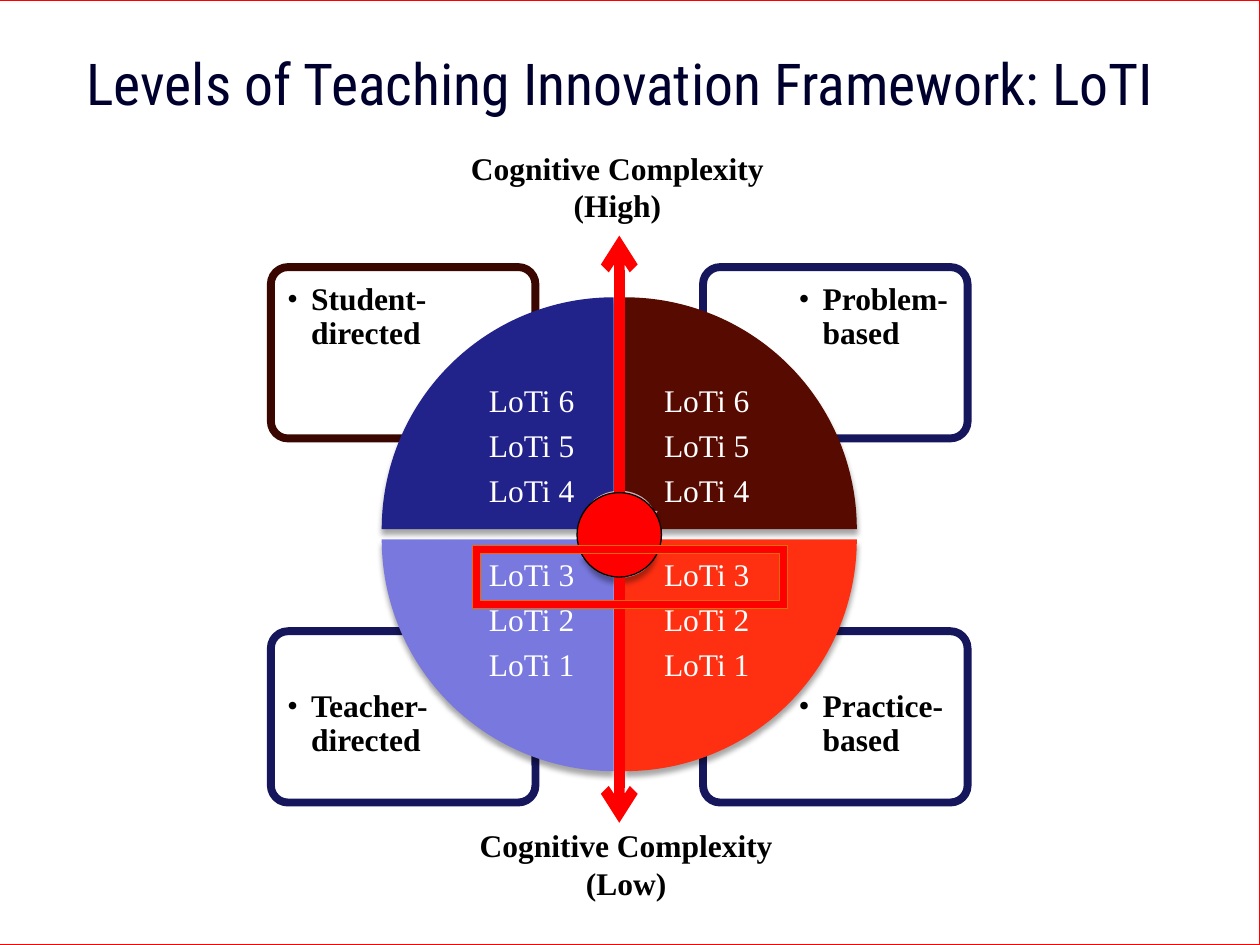
from lxml import etree
from pptx import Presentation
from pptx import util as u
from pptx.dml.color import RGBColor
from pptx.enum import shapes, text
from pptx.oxml.ns import qn

COLORS = {"white": "FFFFFF", "black": "000000", "red": "FF0000", "title": "00002E",
          "navy": "16165D", "maroon": "3A0700", "blue": "22228B", "brown": "560A00",
          "orange": "FF2F12", "lilac": "7878DE", "rose": "D3ABAB", "amber": "E46C0A"}
SHAPE = shapes.MSO_SHAPE
ALIGN = text.PP_ALIGN
ANCHOR = text.MSO_ANCHOR
SERIF = "Times New Roman"


def rgb(name):
    return RGBColor.from_string(COLORS[name])


def add_xml(parent, tag, **attrs):
    return etree.SubElement(parent, qn(tag), {k: str(v) for k, v in attrs.items()})


class Canvas:
    """Places elements on a grid of 100 columns by 75 rows."""

    def __init__(self, prs, cols=100, rows=75):
        self.s = prs.slides.add_slide(prs.slide_layouts[6])
        self.col, self.row = prs.slide_width / cols, prs.slide_height / rows

    def box(self, x, y, w, h):
        return [u.Emu(round(n * unit)) for n, unit in
                zip((x, y, w, h), (self.col, self.row) * 2)]

    def shape(self, kind, at, fill, line=None, width=0.75, rotation=0,
              adj=None, alpha=None, shadow=False):
        sp = self.s.shapes.add_shape(kind, *self.box(*at))
        sp.shadow.inherit = False
        sp.rotation = rotation
        sp.fill.solid()
        sp.fill.fore_color.rgb = rgb(fill)
        if adj is not None:
            sp.adjustments[0] = adj
        if alpha:
            color = sp.fill._xPr.find(".//" + qn("a:srgbClr"))
            add_xml(color, "a:alpha", val=alpha * 1000)
        if line:
            sp.line.color.rgb = rgb(line)
            sp.line.width = u.Pt(width)
        else:
            sp.line.fill.background()
        if shadow:
            effects = sp._element.spPr.find(qn("a:effectLst"))
            outer = add_xml(effects, "a:outerShdw", blurRad=u.Pt(3), dist=u.Pt(3),
                            dir=5400000, rotWithShape=0)
            add_xml(add_xml(outer, "a:srgbClr", val=COLORS["black"]), "a:alpha", val=35000)
        return sp

    def label(self, at, lines, color="black", size=18, name=SERIF, bold=False,
              inset=(0.1, 0.05), anchor=ANCHOR.TOP, bullet=False, **para):
        tf = self.s.shapes.add_textbox(*self.box(*at)).text_frame
        frame = {"word_wrap": True, "vertical_anchor": anchor,
                 "margin_left": u.Inches(inset[0]), "margin_right": u.Inches(inset[0]),
                 "margin_top": u.Inches(inset[1]), "margin_bottom": u.Inches(inset[1])}
        for key, value in frame.items():
            setattr(tf, key, value)
        for i, line in enumerate(lines):
            p = tf.add_paragraph() if i else tf.paragraphs[0]
            for key, value in para.items():
                setattr(p, key, value)
            if bullet:
                pPr = p._p.get_or_add_pPr()
                pPr.set("marL", str(u.Inches(0.19)))
                pPr.set("indent", str(u.Inches(-0.19)))
                add_xml(pPr, "a:buFont", typeface=name)
                add_xml(pPr, "a:buChar", char="•")
            r = p.add_run()
            r.text = line
            for font in (p.font, r.font):
                for key, value in {"name": name, "size": u.Pt(size), "bold": bold}.items():
                    setattr(font, key, value)
                font.color.rgb = rgb(color)

    def double_arrow(self, x, top, bottom, color, width):
        x1, y1, x2, y2 = self.box(x, top, x, bottom)
        cxn = self.s.shapes.add_connector(shapes.MSO_CONNECTOR.STRAIGHT, x1, y1, x2, y2)
        cxn.line.color.rgb = rgb(color)
        cxn.line.width = u.Pt(width)
        ln = cxn.line._get_or_add_ln()
        for end in ("a:headEnd", "a:tailEnd"):
            add_xml(ln, end, type="arrow")
        add_xml(cxn._element.spPr, "a:effectLst")


def main():
    prs = Presentation()
    prs.slide_width, prs.slide_height = u.Inches(10), u.Inches(7.5)
    c = Canvas(prs)

    # Page border and title
    c.shape(SHAPE.RECTANGLE, (-1.7, 0, 101.7, 75), "white", "red")
    c.label((5, 3.35, 88.5, 6.4), ["Levels of Teaching Innovation Framework: LoTI"],
            "title", 33, "Roboto Condensed", anchor=ANCHOR.MIDDLE, alignment=ALIGN.CENTER)

    # Corner panels: panel column, row, text column, text row, outline, label
    panels = [(55.8, 50.1, 62.4, 53.8, "navy", "Practice-based"),
              (21.5, 50.1, 21.8, 53.8, "navy", "Teacher-directed"),
              (55.8, 21.2, 62.4, 21.5, "navy", "Problem-based"),
              (21.5, 21.2, 21.8, 21.5, "maroon", "Student-directed")]
    for x, y, tx, ty, line, name in panels:
        c.shape(SHAPE.ROUNDED_RECTANGLE, (x, y, 21, 13.6), "white", line, 4.5,
                adj=0.1, alpha=90)
        c.label((tx, ty, 14.1, 9.6), [name], bold=True, inset=(0.1, 0.1), bullet=True,
                line_spacing=0.9, space_after=u.Pt(3))

    # Wheel quadrants, clockwise from top left
    size, inner = 18.4, 13
    left, right, top, bottom = 30.3, 49.6, 23.6, 42.8
    quadrants = [(left, top, "blue"), (right, top, "brown"),
                 (right, bottom, "orange"), (left, bottom, "lilac")]
    for i, (x, y, fill) in enumerate(quadrants):
        c.shape(SHAPE.PIE_WEDGE, (x, y, size, size), fill, rotation=90 * i, shadow=True)
        tx = x + size - inner if x == left else x
        ty = y + size - inner if y == top else y
        first = 6 if y == top else 3
        c.label((tx, ty, inner, inner), [f"LoTi {n}" for n in range(first, first - 3, -1)],
                "white", inset=(0.14, 0.14), anchor=ANCHOR.MIDDLE, alignment=ALIGN.CENTER,
                line_spacing=0.9, space_after=u.Pt(6.3))

    # Turning arrows around the hub
    for y, rotation in ((38.6, 0), (40.7, 180)):
        c.shape(SHAPE.CIRCULAR_ARROW, (46, y, 6.4, 5.5), "rose", rotation=rotation, shadow=True)

    # Complexity axis and its end labels
    c.double_arrow(49.15, 18.7, 65.3, "red", 6)
    for x, y, level in ((34.3, 65.1, "(Low)"), (33.6, 11.3, "(High)")):
        c.label((x, y, 30.8, 7.2), ["Cognitive Complexity", level], bold=True,
                alignment=ALIGN.CENTER)

    # Hub and highlight of level 3
    c.shape(SHAPE.OVAL, (45.8, 39.1, 6.7, 6.7), "red", "black")
    c.shape(SHAPE.FRAME, (37.5, 43.3, 25, 5), "red", "amber")

    prs.save("out.pptx")


if __name__ == "__main__":
    main()
